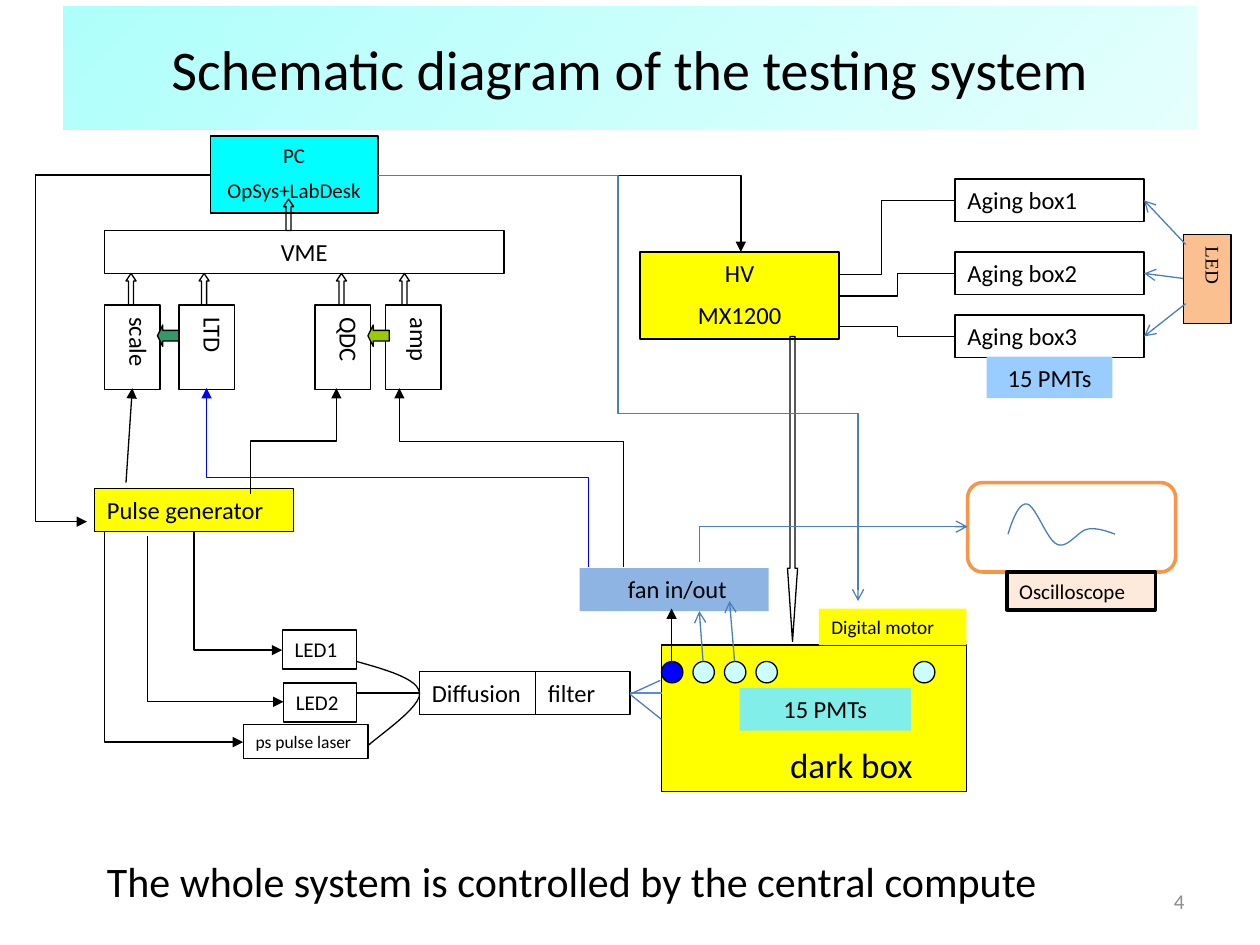
from dataclasses import dataclass
from typing import Any, Optional

from lxml import etree
from pptx import Presentation
from pptx.dml.color import RGBColor
from pptx.enum.shapes import MSO_CONNECTOR, MSO_SHAPE
from pptx.enum.text import MSO_ANCHOR, PP_ALIGN
from pptx.oxml.ns import qn
from pptx.util import Cm, Pt

RECTANGLE, ROUNDED, OVAL = MSO_SHAPE.RECTANGLE, MSO_SHAPE.ROUNDED_RECTANGLE, MSO_SHAPE.OVAL
UP, DOWN, LEFT_ARROW = MSO_SHAPE.UP_ARROW, MSO_SHAPE.DOWN_ARROW, MSO_SHAPE.LEFT_ARROW
STRAIGHT, ELBOW = MSO_CONNECTOR.STRAIGHT, MSO_CONNECTOR.ELBOW
TOP, MIDDLE, BOTTOM = MSO_ANCHOR.TOP, MSO_ANCHOR.MIDDLE, MSO_ANCHOR.BOTTOM
LEFT, CENTER, RIGHT = PP_ALIGN.LEFT, PP_ALIGN.CENTER, PP_ALIGN.RIGHT
GRID = 2.54
QUARTER_TURN = 5400000
Point = tuple[float, float]


@dataclass(frozen=True)
class Theme:
    font: str = "Calibri"
    serif: str = "Times New Roman"
    black: str = "000000"
    white: str = "FFFFFF"
    gray: str = "8C8C8C"
    yellow: str = "FFFF00"
    cyan: str = "00FFFF"
    blue: str = "0000FF"
    pale: str = "CCFFFF"
    wire: str = "4B7EBC"
    light_wire: str = "558ED5"
    orange: str = "F79646"
    peach: str = "FAC090"
    cream: str = "FDEADA"
    fan: str = "8EB4E3"
    aqua: str = "82EEE9"
    sky: str = "99CCFF"
    green: str = "339966"
    lime: str = "99CC00"
    title_start: str = "AEFFFB"
    title_end: str = "E5FFFD"
    title: float = 32
    closing: float = 24
    large: float = 20
    body: float = 14
    small: float = 12
    caption: float = 11
    tiny: float = 10
    thin: float = 0.75
    thick: float = 2


THEME = Theme()


@dataclass(frozen=True)
class Box:
    left: float
    top: float
    width: float
    height: float
    lines: tuple[str, ...] = ()
    size: float = THEME.body
    fill: Optional[str] = None
    line: Optional[str] = THEME.black
    align: Any = LEFT
    anchor: Any = TOP
    kind: Any = RECTANGLE
    weight: float = THEME.thin
    color: str = THEME.black
    font: str = THEME.font
    vertical: bool = False
    inset: float = 0.1
    tab: Optional[float] = None
    adjustments: tuple[float, ...] = ()


@dataclass(frozen=True)
class Wire:
    start: Point
    end: Point
    route: str = "line"
    arrow: Optional[str] = None
    color: str = THEME.black
    vertical: bool = False
    bend: float = 0.5


def length(units: float) -> int:
    return Cm(units * GRID)


def set_values(target: Any, values: dict[str, Any]) -> None:
    for name, value in values.items():
        setattr(target, name, value)


def set_outline(shape: Any, color: str, weight: float) -> None:
    shape.line.width = Pt(weight)
    shape.line.color.rgb = RGBColor.from_string(color)


def write_text(frame: Any, box: Box) -> None:
    set_values(frame, {"word_wrap": True, "vertical_anchor": box.anchor,
                       "margin_left": length(box.inset), "margin_right": length(0.1),
                       "margin_top": length(0.05), "margin_bottom": length(0.05)})
    if box.vertical:
        frame._txBody.bodyPr.set("vert", "eaVert")
    for index, text in enumerate(box.lines):
        para = frame.add_paragraph() if index else frame.paragraphs[0]
        para.alignment = box.align
        if index:
            para.space_before = Pt(box.size / 2)
        if box.tab:
            tabs = etree.SubElement(para._p.get_or_add_pPr(), qn("a:tabLst"))
            etree.SubElement(tabs, qn("a:tab"), pos=str(length(box.tab)), algn="l")
        span = para.add_run()
        span.text = text
        set_values(span.font, {"name": box.font, "size": Pt(box.size)})
        span.font.color.rgb = RGBColor.from_string(box.color)


def draw_box(page: Any, box: Box) -> None:
    place = [length(value) for value in (box.left, box.top, box.width, box.height)]
    shape = page.shapes.add_shape(box.kind, *place)
    shape.shadow.inherit = False
    for index, value in enumerate(box.adjustments):
        shape.adjustments[index] = value
    if box.fill:
        shape.fill.solid()
        shape.fill.fore_color.rgb = RGBColor.from_string(box.fill)
    else:
        shape.fill.background()
    if box.line:
        set_outline(shape, box.line, box.weight)
    else:
        shape.line.fill.background()
    write_text(shape.text_frame, box)


def draw_label(page: Any, box: Box) -> None:
    place = [length(value) for value in (box.left, box.top, box.width, box.height)]
    write_text(page.shapes.add_textbox(*place).text_frame, box)


def draw_wire(page: Any, wire: Wire) -> None:
    (x1, y1), (x2, y2) = wire.start, wire.end
    turn = 0
    if wire.vertical:
        turn = 1 if x2 < x1 else -1
        middle_x, middle_y = (x1 + x2) / 2, (y1 + y2) / 2
        half_x, half_y = turn * (y2 - y1) / 2, -turn * (x2 - x1) / 2
        x1, x2 = middle_x - half_x, middle_x + half_x
        y1, y2 = middle_y - half_y, middle_y + half_y
    kind = STRAIGHT if wire.route == "line" else ELBOW
    connector = page.shapes.add_connector(kind, *map(length, (x1, y1, x2, y2)))
    properties = connector._element.spPr
    geometry = properties.find(qn("a:prstGeom"))
    geometry.set("prst", wire.route)
    if turn:
        properties.find(qn("a:xfrm")).set("rot", str(turn % 4 * QUARTER_TURN))
    if wire.route == "bentConnector3":
        guides = geometry.find(qn("a:avLst"))
        etree.SubElement(guides, qn("a:gd"), name="adj1", fmla=f"val {round(wire.bend * 100000)}")
    set_outline(connector, wire.color, THEME.thin)
    if wire.arrow:
        etree.SubElement(properties.find(qn("a:ln")), qn("a:tailEnd"), type=wire.arrow)
    etree.SubElement(properties, qn("a:effectLst"))


def draw_curve(page: Any, knots: list[Point], color: str, steps: int = 12) -> None:
    points = []
    for first in range(0, len(knots) - 1, 3):
        for step in range(1, steps + 1):
            t = step / steps
            weights = ((1 - t) ** 3, 3 * t * (1 - t) ** 2, 3 * t * t * (1 - t), t ** 3)
            points.append(tuple(length(sum(weight * knot[axis] for weight, knot in
                                           zip(weights, knots[first:first + 4]))) for axis in (0, 1)))
    builder = page.shapes.build_freeform(*map(length, knots[0]))
    builder.add_line_segments(points, close=False)
    curve = builder.convert_to_shape()
    curve.shadow.inherit = False
    curve.fill.background()
    set_outline(curve, color, THEME.thin)


def draw_title(page: Any) -> None:
    title = page.shapes.title
    set_values(title, {"left": length(0.5), "top": length(0.05),
                       "width": length(9), "height": length(0.98)})
    title.fill.gradient()
    title.fill.gradient_angle = 315
    for stop, color in zip(title.fill.gradient_stops, (THEME.title_start, THEME.title_end)):
        stop.color.rgb = RGBColor.from_string(color)
    write_text(title.text_frame, Box(0, 0, 0, 0, ("Schematic diagram of the testing system",),
                                     THEME.title, align=CENTER, anchor=MIDDLE))


T = THEME
BOXES = [
    Box(1.67, 1.08, 1.33, 0.61, ("PC", "OpSys+LabDesk"), T.small, T.cyan, align=CENTER),
    Box(0.83, 1.83, 3.17, 0.34, ("VME",), align=CENTER),
    Box(5.08, 2, 1.58, 0.69, ("HV", "MX1200"), fill=T.yellow, align=CENTER),
    Box(5.25, 5.12, 2.42, 1.16, ("dark box",), T.large, T.yellow, anchor=BOTTOM, inset=1.02),
    *[Box(5.25 + 0.25 * slot, 5.25, 0.17, 0.17, fill=T.pale if slot else T.blue, kind=OVAL)
      for slot in (0, 1, 2, 3, 8)],
    *[Box(left, 2.42, 0.44, 0.67, (name,), vertical=True)
      for left, name in ((0.83, "scale"), (1.42, "LTD"), (2.5, "QDC"), (3.06, "amp"))],
    Box(0.75, 3.88, 1.58, 0.34, ("Pulse generator",), fill=T.yellow),
    Box(3.33, 5.33, 1.67, 0.34, ("Diffusion\tfilter",), tab=0.92),
    Box(2.24, 5, 0.59, 0.31, ("LED1",), T.small),
    Box(2.25, 5.42, 0.58, 0.31, ("LED2",), T.small),
    Box(1.93, 5.75, 0.99, 0.27, ("ps pulse laser",), T.tiny),
    *[Box(7.58, top, 1.5, 0.34, (f"Aging box{number}",))
      for number, top in enumerate((1.42, 2, 2.5), 1)],
    *[Box(left, 2.58, 0.17, 0.17, fill=fill, kind=LEFT_ARROW, adjustments=(0.5, 0.25))
      for left, fill in ((1.25, T.green), (2.92, T.lime))],
    *[Box(left, top, 0.08, 0.25, kind=UP, adjustments=(0.5, 0.75))
      for left, top in ((1, 2.17), (1.58, 2.17), (2.25, 1.58), (2.67, 2.17), (3.17, 2.17))],
    Box(9.39, 1.86, 0.38, 0.71, ("LED",), T.caption, T.peach, align=CENTER,
        font=T.serif, vertical=True),
    Box(6.5, 4.83, 1.17, 0.29, ("Digital motor",), T.caption, T.yellow, None),
    Box(6.25, 2.67, 0.08, 2.42, kind=DOWN, adjustments=(0.5, 7.25)),
    Box(4.6, 4.51, 1.5, 0.34, ("fan in/out",), fill=T.fan, line=None, align=CENTER, inset=0.15),
    Box(5.87, 5.46, 1.36, 0.34, ("15 PMTs",), fill=T.aqua, line=None, align=CENTER),
    Box(7.83, 2.83, 1, 0.33, ("15 PMTs",), fill=T.sky, line=None, align=CENTER),
    Box(7.68, 3.83, 1.65, 0.71, fill=T.white, line=T.orange, kind=ROUNDED, weight=T.thick),
    Box(7.99, 4.54, 1.18, 0.3, ("Oscilloscope",), T.small, T.cream, weight=T.thick),
]
ONE_BEND, TWO_BENDS = "bentConnector2", "bentConnector3"
WIRES = [
    Wire((1, 3.83), (1.05, 3.08), arrow="triangle"),
    Wire((1.99, 3.92), (2.67, 3.08), TWO_BENDS, "triangle", vertical=True),
    *[Wire(start, end, ONE_BEND, "triangle", vertical=True) for start, end in (
        ((1.54, 4.22), (2.24, 5.16)), ((1.17, 4.25), (2.25, 5.57)),
        ((0.83, 4.22), (1.93, 5.89)), ((0.28, 1.39), (0.69, 4.14)))],
    Wire((1.67, 1.39), (0.28, 1.39)),
    Wire((6.67, 2.18), (7.58, 1.59), TWO_BENDS, bend=0.36),
    Wire((6.67, 2.35), (7.58, 2.17), TWO_BENDS),
    Wire((6.67, 2.59), (7.58, 2.67), TWO_BENDS),
    Wire((3, 1.39), (5.88, 2), ONE_BEND, "triangle"),
    Wire((4.25, 5.33), (4.25, 5.67)),
    Wire((5.33, 5.25), (5.33, 4.83), arrow="triangle"),
    Wire((4.95, 4.5), (3.17, 3.08), TWO_BENDS, "triangle", vertical=True, bend=0.7),
    Wire((4.67, 4.5), (1.64, 3.08), TWO_BENDS, "triangle", T.blue, vertical=True),
    Wire((2.83, 5.5), (3.33, 5.5)),
    Wire((5, 5.5), (5.25, 5.5), color=T.light_wire),
    *[Wire((5, 5.51), end, color=T.wire) for end in ((5.24, 5.4), (5.25, 5.71))],
    *[Wire(start, end, arrow="arrow", color=T.wire) for start, end in (
        ((9.41, 1.94), (9.08, 1.59)), ((9.39, 2.21), (9.08, 2.17)), ((9.41, 2.41), (9.08, 2.67)),
        ((6.81, 3.28), (6.81, 4.77)), ((5.58, 5.25), (5.55, 4.85)), ((5.83, 5.25), (5.79, 4.77)))],
    Wire((3, 1.39), (6.81, 3.28), TWO_BENDS, color=T.wire),
    Wire((5.55, 4.46), (7.68, 4.18), TWO_BENDS, "arrow", T.wire, bend=0),
]
LIGHT_GUIDE = [(2.83, 5.25), (3.08, 5.32), (3.32, 5.39), (3.33, 5.5),
               (3.35, 5.61), (2.99, 5.85), (2.92, 5.92)]
SIGNAL = [(8, 4.24), (8.04, 4.11), (8.09, 3.99), (8.15, 4), (8.22, 4.01), (8.31, 4.29),
          (8.39, 4.32), (8.47, 4.36), (8.56, 4.21), (8.63, 4.2), (8.71, 4.18), (8.85, 4.24),
          (8.85, 4.24)]
LABELS = [
    Box(7.17, 6.95, 2.33, 0.4, ("4",), T.small, align=RIGHT, anchor=MIDDLE, color=T.gray),
    Box(0.75, 6.74, 7.95, 0.5, ("The whole system is controlled by the central compute",), T.closing),
]


def main() -> None:
    deck = Presentation()
    set_values(deck, {"slide_width": length(10), "slide_height": length(7.5)})
    page = deck.slides.add_slide(deck.slide_layouts[5])
    draw_title(page)
    for box in BOXES:
        draw_box(page, box)
    for wire in WIRES:
        draw_wire(page, wire)
    draw_curve(page, LIGHT_GUIDE, T.black)
    draw_curve(page, SIGNAL, T.wire)
    for label in LABELS:
        draw_label(page, label)
    deck.save("out.pptx")


if __name__ == "__main__":
    main()
